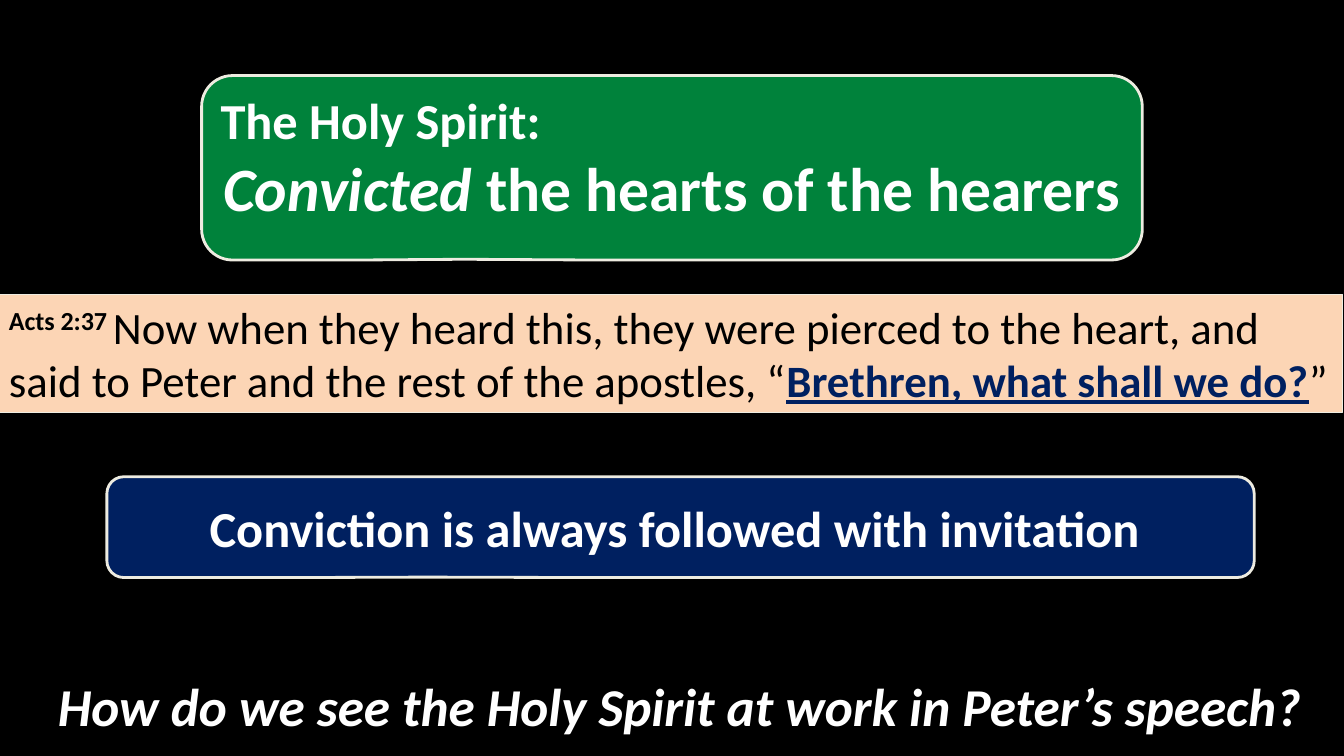
from dataclasses import dataclass

from pptx import Presentation
from pptx.dml.color import RGBColor
from pptx.enum.shapes import MSO_SHAPE
from pptx.enum.text import MSO_ANCHOR, MSO_AUTO_SIZE, PP_ALIGN
from pptx.util import Inches, Pt

CALLOUT = MSO_SHAPE.ROUNDED_RECTANGULAR_CALLOUT
RECTANGLE = MSO_SHAPE.RECTANGLE
TOP, MIDDLE = MSO_ANCHOR.TOP, MSO_ANCHOR.MIDDLE
LEFT, CENTER = PP_ALIGN.LEFT, PP_ALIGN.CENTER
NO_AUTOFIT = MSO_AUTO_SIZE.NONE
TITLE_ONLY_LAYOUT = 5
CALLOUT_POINT = (-0.222, 0.496, 0.167)


@dataclass(frozen=True)
class Theme:
    font: str = "Calibri"
    black: str = "000000"
    white: str = "FFFFFF"
    green: str = "00823B"
    navy: str = "002060"
    peach: str = "FCD5B5"
    ivory: str = "EEECE1"
    verse_size: int = 32
    statement_size: int = 36
    question_size: int = 38
    headline_size: int = 44


class SlideBuilder:
    def __init__(self, presentation, theme):
        self.theme = theme
        self.slide = presentation.slides.add_slide(
            presentation.slide_layouts[TITLE_ONLY_LAYOUT])
        background = self.slide.background.fill
        background.solid()
        background.fore_color.rgb = RGBColor.from_string(theme.black)

    def fill_text(self, shape, paragraphs, anchor):
        """Fill a shape with (alignment, size, color, runs) paragraphs.

        Each run is a text and a dict of font values; "color" and
        "baseline" are handled apart from the plain font attributes.
        """
        frame = shape.text_frame
        frame.word_wrap = True
        frame.auto_size = NO_AUTOFIT
        frame.vertical_anchor = anchor
        for index, (alignment, size, color, runs) in enumerate(paragraphs):
            paragraph = frame.add_paragraph() if index else frame.paragraphs[0]
            paragraph.alignment = alignment
            for text, run_format in runs:
                run = paragraph.add_run()
                run.text = text
                values = {"name": self.theme.font, "size": Pt(size), **run_format}
                run_color = values.pop("color", color)
                baseline = values.pop("baseline", None)
                for name, value in values.items():
                    setattr(run.font, name, value)
                run.font.color.rgb = RGBColor.from_string(run_color)
                if baseline:
                    run.font._element.set("baseline", str(baseline))

    def title(self, box, paragraphs):
        title = self.slide.shapes.title
        title.left, title.top, title.width, title.height = map(Inches, box)
        self.fill_text(title, paragraphs, MIDDLE)

    def panel(self, kind, box, fill, line_width, paragraphs, anchor=TOP):
        shape = self.slide.shapes.add_shape(kind, *map(Inches, box))
        shape.shadow.inherit = False
        shape.fill.solid()
        shape.fill.fore_color.rgb = RGBColor.from_string(fill)
        shape.line.color.rgb = RGBColor.from_string(self.theme.ivory)
        shape.line.width = Pt(line_width)
        if kind == CALLOUT:
            for index, value in enumerate(CALLOUT_POINT):
                shape.adjustments[index] = value
        self.fill_text(shape, paragraphs, anchor)


def main():
    presentation = Presentation()
    presentation.slide_width = Inches(13.33)
    presentation.slide_height = Inches(7.5)
    theme = Theme()
    builder = SlideBuilder(presentation, theme)
    bold = {"bold": True}
    bold_italic = {"bold": True, "italic": True}

    builder.title((-0.17, 6.5, 13.83, 1), [
        (CENTER, theme.question_size, theme.white, [
            ("How do we see the Holy Spirit at work in Peter’s speech?", bold_italic),
        ]),
    ])
    builder.panel(CALLOUT, (2, 0.75, 9.33, 1.83), theme.green, 2, [
        (LEFT, theme.statement_size, theme.white, [("The Holy Spirit:", bold)]),
        (CENTER, theme.headline_size, theme.white, [
            ("Convicted ", bold_italic),
            ("the hearts of the hearers", bold),
        ]),
    ])
    builder.panel(RECTANGLE, (-0.01, 2.92, 13.33, 1.17), theme.peach, 0.75, [
        (LEFT, theme.verse_size, theme.black, [
            ("Acts 2:37 ", {"bold": True, "baseline": 30000}),
            ("Now when they heard this, they were pierced to the heart, and "
             "said to Peter and the rest of the apostles, “", {}),
            ("Brethren, what shall we do?",
             {"bold": True, "underline": True, "color": theme.navy}),
            ("”", {}),
        ]),
    ])
    builder.panel(CALLOUT, (1.06, 4.73, 11.38, 1), theme.navy, 2, [
        (CENTER, theme.statement_size, theme.white, [
            ("Conviction is always followed with invitation ", bold),
        ]),
    ], MIDDLE)
    presentation.save("out.pptx")


if __name__ == "__main__":
    main()
